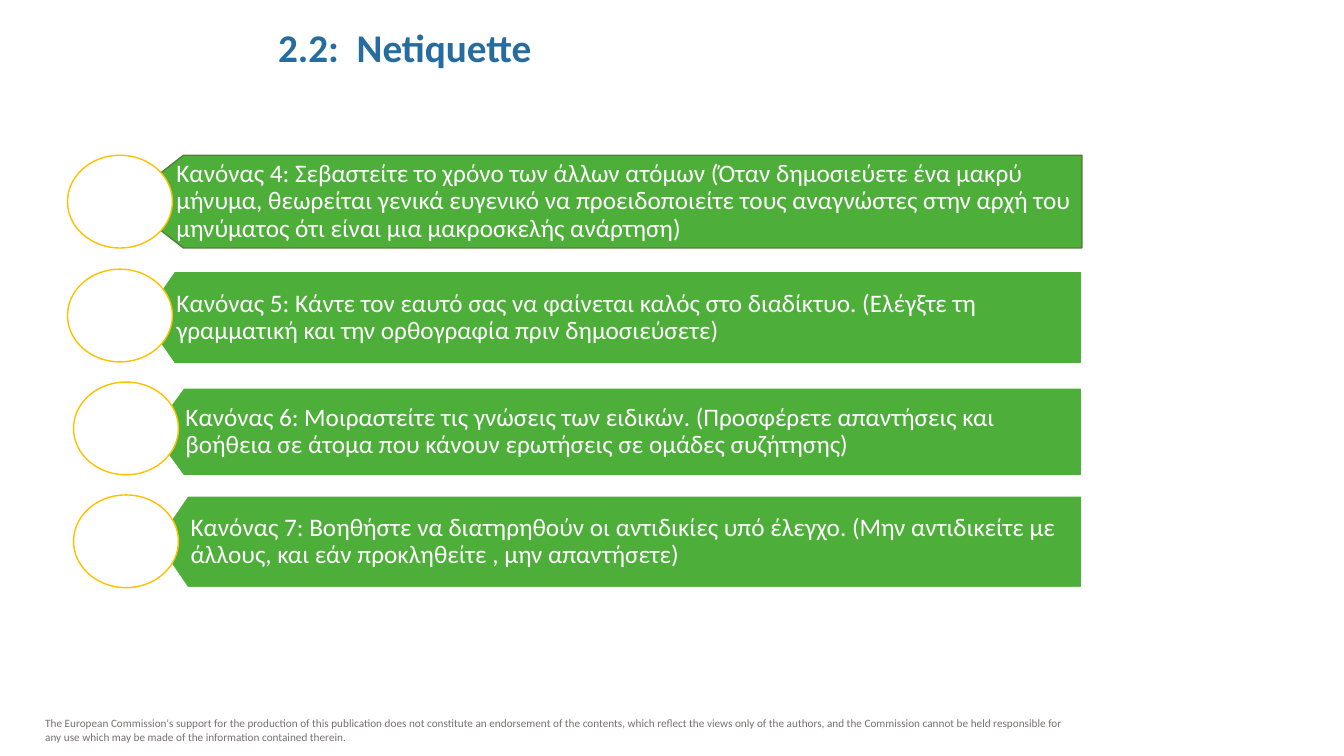
from dataclasses import dataclass

from pptx import Presentation
from pptx.dml.color import RGBColor
from pptx.enum import shapes, text
from pptx.util import Inches, Pt


@dataclass(frozen=True)
class Theme:
    font: str = "Calibri"
    title: str = "266C9F"
    grey: str = "767171"
    green: str = "4EAE3A"
    dark_green: str = "538035"
    amber: str = "FFC000"
    white: str = "FFFFFF"
    title_size: int = 28
    body_size: int = 18
    note_size: int = 8


T = Theme()
RIGHT = 10.73
CIRCLE_W, CIRCLE_H = 1.04, 0.92
WIDE, NARROW = (0.52, 0.06, 0.11, 0.06), (0.34, 0.05, 0.09, 0.05)

# text, tip x, shoulder x, top, height, outline, text insets, circle left and top
RULES = [
    ("Κανόνας 4: Σεβαστείτε το χρόνο των άλλων ατόμων (Όταν δημοσιεύετε ένα μακρύ "
     "μήνυμα, θεωρείται γενικά ευγενικό να προειδοποιείτε τους αναγνώστες στην αρχή του "
     "μηνύματος ότι είναι μια μακροσκελής ανάρτηση)",
     1.23, 1.82, 1.54, 0.92, T.dark_green, WIDE, (0.67, 1.54)),
    ("Κανόνας 5: Κάντε τον εαυτό σας να φαίνεται καλός στο διαδίκτυο. (Ελέγξτε τη "
     "γραμματική και την ορθογραφία πριν δημοσιεύσετε)",
     1.41, 1.73, 2.69, 0.92, T.white, NARROW, (0.67, 2.67)),
    ("Κανόνας 6: Μοιραστείτε τις γνώσεις των ειδικών. (Προσφέρετε απαντήσεις και "
     "βοήθεια σε άτομα που κάνουν ερωτήσεις σε ομάδες συζήτησης)",
     1.5, 1.82, 3.85, 0.87, T.white, NARROW, (0.73, 3.79)),
    ("Κανόνας 7: Βοηθήστε να διατηρηθούν οι αντιδικίες υπό έλεγχο. (Μην αντιδικείτε με "
     "άλλους, και εάν προκληθείτε , μην απαντήσετε)",
     1.55, 1.86, 4.92, 0.91, T.white, NARROW, (0.73, 4.91)),
]


def write(sp, words, size, color, bold=False, align=text.PP_ALIGN.LEFT,
          anchor=text.MSO_ANCHOR.MIDDLE, spacing=1.0, insets=(0.1, 0.05, 0.1, 0.05)):
    tf = sp.text_frame
    tf.word_wrap = True
    tf.vertical_anchor = anchor
    tf.margin_left, tf.margin_top, tf.margin_right, tf.margin_bottom = map(Inches, insets)
    p = tf.paragraphs[0]
    p.alignment, p.line_spacing = align, spacing
    r = p.add_run()
    r.text = words
    r.font.name, r.font.size, r.font.bold = T.font, Pt(size), bold
    r.font.color.rgb = RGBColor.from_string(color)


def paint(sp, fill, line):
    sp.shadow.inherit = False
    sp.fill.solid()
    sp.fill.fore_color.rgb = RGBColor.from_string(fill)
    sp.line.color.rgb = RGBColor.from_string(line)
    sp.line.width = Pt(1)


def add_label(s, box, words, **fmt):
    write(s.shapes.add_textbox(*map(Inches, box)), words, **fmt)


def add_banner(s, words, tip, shoulder, top, height, line, insets):
    """Draw a bar whose left end narrows to a point."""
    bottom = top + height
    corners = [(shoulder, bottom), (tip, top + height / 2), (shoulder, top), (RIGHT, top)]
    fb = s.shapes.build_freeform(Inches(RIGHT), Inches(bottom))
    fb.add_line_segments([(Inches(x), Inches(y)) for x, y in corners], close=True)
    sp = fb.convert_to_shape()
    paint(sp, T.green, line)
    write(sp, words, T.body_size, T.white, spacing=0.9, insets=insets)


def add_circle(s, left, top):
    sp = s.shapes.add_shape(shapes.MSO_SHAPE.OVAL, Inches(left), Inches(top),
                            Inches(CIRCLE_W), Inches(CIRCLE_H))
    paint(sp, T.white, T.amber)


def main():
    prs = Presentation()
    prs.slide_width, prs.slide_height = Inches(13.33), Inches(7.5)
    s = prs.slides.add_slide(prs.slide_layouts[6])
    add_label(s, (0.35, 7.06, 10.46, 0.37),
              "The European Commission's support for the production of this publication does "
              "not constitute an endorsement of the contents, which reflect the views only of "
              "the authors, and the Commission cannot be held responsible for any use which "
              "may be made of the information contained therein.",
              size=T.note_size, color=T.grey, anchor=text.MSO_ANCHOR.TOP)
    add_label(s, (2.66, 0.1, 4.01, 0.65), "2.2:  Netiquette", size=T.title_size,
              color=T.title, bold=True, align=text.PP_ALIGN.JUSTIFY, spacing=1.15)
    for *banner, circle in RULES:
        add_banner(s, *banner)
        add_circle(s, *circle)
    prs.save("out.pptx")


if __name__ == "__main__":
    main()
